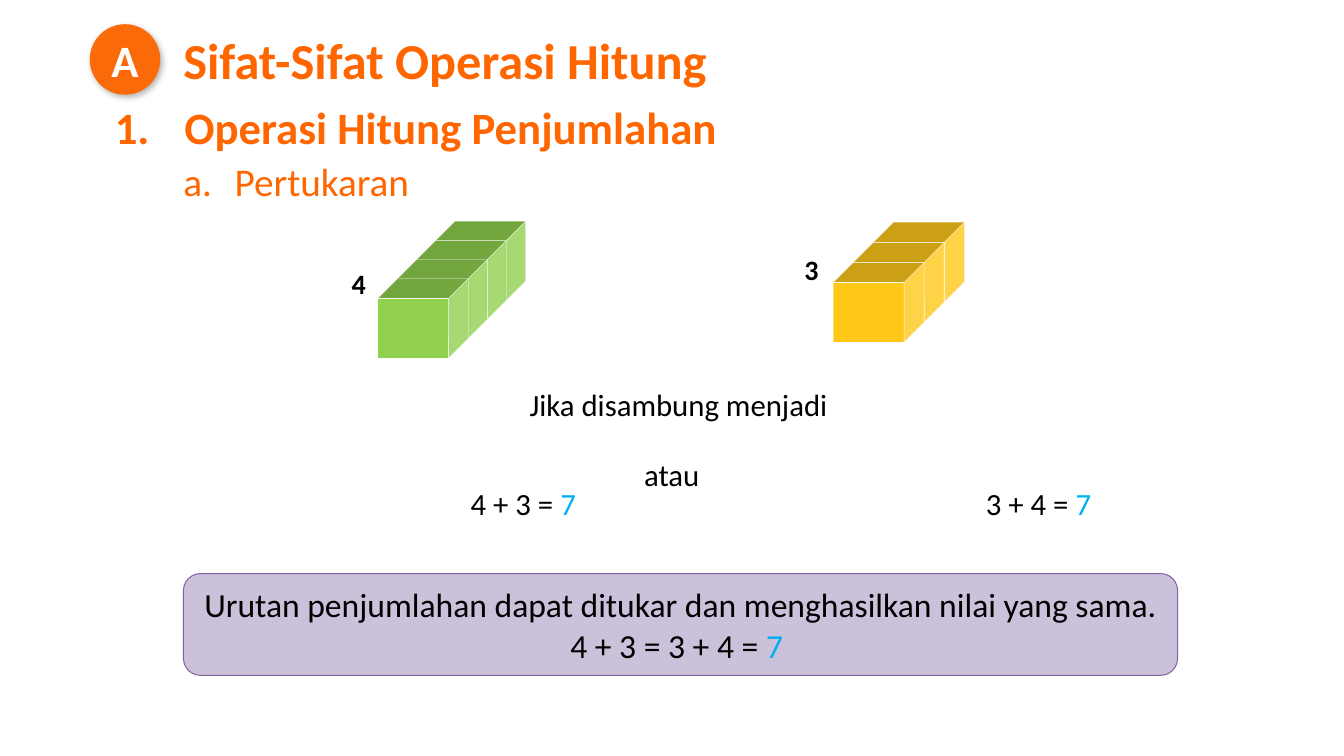
import pptx
import pptx.util
import pptx.dml.color
import pptx.enum.shapes
import pptx.enum.text
import pptx.oxml
import pptx.oxml.ns
from lxml import etree

Inches = pptx.util.Inches
Pt = pptx.util.Pt
SHAPE = pptx.enum.shapes.MSO_SHAPE
ALIGN = pptx.enum.text.PP_ALIGN
ANCHOR = pptx.enum.text.MSO_ANCHOR
qn = pptx.oxml.ns.qn

ORANGE = "FF6600"
BLACK = "000000"
WHITE = "FFFFFF"
CYAN = "00B0F0"
GREEN = "92D050"
YELLOW = "FFC819"


def rgb(value):
    return pptx.dml.color.RGBColor.from_string(value)


class Deck:
    font = "Calibri"

    def __init__(self, width, height):
        self.prs = pptx.Presentation()
        self.prs.slide_width = Inches(width)
        self.prs.slide_height = Inches(height)
        self.s = self.prs.slides.add_slide(self.prs.slide_layouts[6])

    def fill_text(self, tf, lines, size, color=BLACK, bold=False, align=None, tab=None):
        for i, runs in enumerate(lines):
            p = tf.paragraphs[0] if i == 0 else tf.add_paragraph()
            if align is not None:
                p.alignment = align
            if tab:
                tabs = etree.SubElement(p._p.get_or_add_pPr(), qn("a:tabLst"))
                etree.SubElement(tabs, qn("a:tab"), pos=str(Inches(tab)), algn="l")
            p.font.name = self.font
            p.font.size = Pt(size)
            p.font.bold = bold
            p.font.color.rgb = rgb(color)
            for text, run_color in runs:
                r = p.add_run()
                r.text = text
                if run_color:
                    r.font.color.rgb = rgb(run_color)

    def text(self, box, runs, size, wrap=True, **style):
        tf = self.s.shapes.add_textbox(*map(Inches, box)).text_frame
        tf.word_wrap = wrap
        tf.auto_size = pptx.enum.text.MSO_AUTO_SIZE.SHAPE_TO_FIT_TEXT
        self.fill_text(tf, [runs], size, **style)

    def shape(self, kind, box, fill, line=None, width=0.25):
        sp = self.s.shapes.add_shape(kind, *map(Inches, box))
        sp.shadow.inherit = False
        sp.fill.solid()
        sp.fill.fore_color.rgb = rgb(fill)
        if line:
            sp.line.color.rgb = rgb(line)
            sp.line.width = Pt(width)
        else:
            sp.line.fill.background()
        return sp

    def badge(self, box, letter):
        sp = self.shape(SHAPE.OVAL, box, ORANGE)
        spPr = sp._element.spPr
        fill = spPr.find(qn("a:solidFill")).find(qn("a:srgbClr"))
        etree.SubElement(fill, qn("a:alpha"), val="95000")
        shadow = etree.SubElement(
            spPr.find(qn("a:effectLst")), qn("a:outerShdw"), blurRad=str(Pt(4.5)),
            dist=str(Pt(2.6)), dir=str(53 * 60000), algn="tl", rotWithShape="0")
        color = etree.SubElement(shadow, qn("a:srgbClr"), val=BLACK)
        etree.SubElement(color, qn("a:alpha"), val="30000")
        tf = sp.text_frame
        tf.margin_left = tf.margin_right = tf.margin_top = tf.margin_bottom = 0
        tf.word_wrap = False
        tf.vertical_anchor = ANCHOR.MIDDLE
        self.fill_text(tf, [[(letter, None)]], 32, WHITE, True, ALIGN.CENTER)

    def cubes(self, left, top, count, step, fill):
        for i in range(count):
            box = (left - i * step, top + i * step, 0.79, 0.9)
            sp = self.shape(SHAPE.CUBE, box, fill, "F9F9F9")
            sp.rotation = 90
            sp._element.spPr.get_or_add_xfrm().set("flipH", "1")

    def panel(self, box, lines):
        sp = self.shape(SHAPE.ROUNDED_RECTANGLE, box, "CCC1DA", "8064A2", 0.75)
        tf = sp.text_frame
        tf.word_wrap = True
        tf.vertical_anchor = ANCHOR.MIDDLE
        self.fill_text(tf, lines, 24, align=ALIGN.CENTER)


def main():
    deck = Deck(13.33, 7.5)
    deck.badge((0.89, 0.24, 0.7, 0.7), "A")
    deck.text((1.72, 0.24, 5.46, 0.71), [("Sifat-Sifat Operasi Hitung", None)], 36,
              wrap=False, color=ORANGE, bold=True)
    deck.text((1.04, 0.94, 6.22, 0.64), [("1.\tOperasi Hitung Penjumlahan", None)], 32,
              wrap=False, color=ORANGE, bold=True, tab=0.69)
    deck.text((1.72, 1.51, 4.96, 0.57), [("a.\tPertukaran", None)], 28,
              color=ORANGE, tab=0.51)

    deck.cubes(4.37, 2.14, 4, 0.19, GREEN)
    deck.cubes(8.72, 2.15, 3, 0.2, YELLOW)
    for left, top, count in ((3.39, 2.59, "4"), (7.88, 2.46, "3")):
        deck.text((left, top, 0.55, 0.44), [(count, None)], 20, bold=True)

    deck.text((4.75, 3.78, 3.96, 0.47), [("Jika disambung menjadi", None)], 22,
              align=ALIGN.CENTER)
    deck.text((6.29, 4.47, 0.83, 0.47), [("atau", None)], 22)
    for left, width, total in ((4.57, 1.42, "4 + 3 = "), (9.68, 1.34, "3 + 4 = ")):
        deck.text((left, 4.76, width, 0.47), [(total, None), ("7", CYAN)], 22)

    deck.panel((1.82, 5.69, 9.86, 1.01), [
        [("Urutan penjumlahan dapat ditukar dan menghasilkan nilai yang sama.", None)],
        [("4 + 3 = 3 + 4 = ", None), ("7 ", CYAN)],
    ])
    deck.prs.save("out.pptx")


if __name__ == "__main__":
    main()
